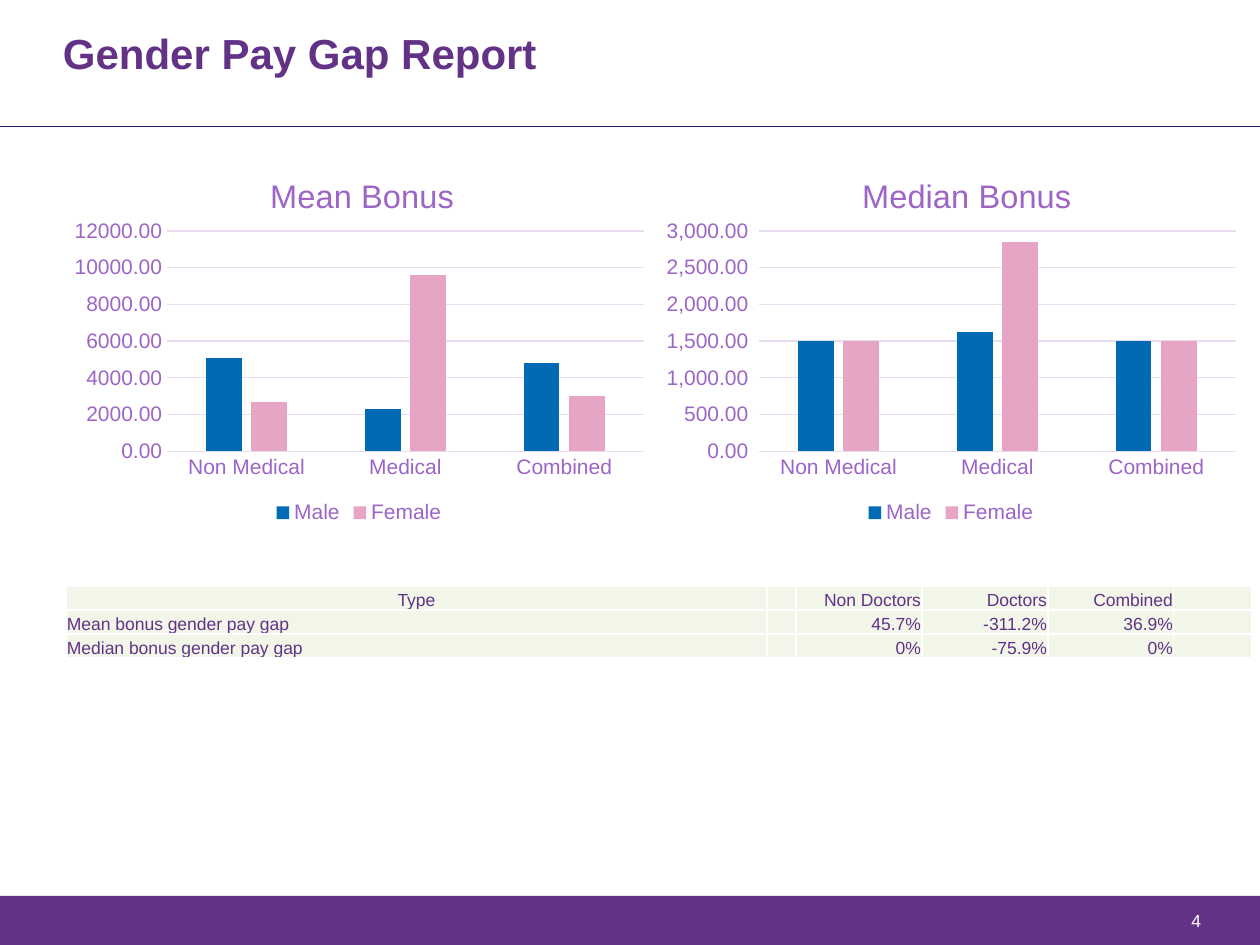
from lxml import etree
from pptx import Presentation
from pptx.chart.data import CategoryChartData
from pptx.dml.color import RGBColor
from pptx.enum.chart import XL_CHART_TYPE, XL_LEGEND_POSITION, XL_TICK_MARK
from pptx.enum.shapes import MSO_CONNECTOR, MSO_SHAPE
from pptx.enum.text import MSO_ANCHOR, PP_ALIGN
from pptx.oxml.ns import qn
from pptx.util import Pt

LEFT, CENTER, RIGHT = PP_ALIGN.LEFT, PP_ALIGN.CENTER, PP_ALIGN.RIGHT
NO_TICK = XL_TICK_MARK.NONE
SCALE = 914400 // 126  # EMU in one px
FONT = "Arial"
COLORS = {
    "purple": "623287", "navy": "1D155F", "white": "FFFFFF", "lilac": "9C65C6",
    "grid": "E8DBF2", "male": "006AB4", "female": "E6A5C4", "cell": "F1F6E9",
}

TITLE = "Gender Pay Gap Report"
PAGE_NUMBER = "4"
CATEGORIES = ["Non Medical", "Medical", "Combined"]
CHARTS = [
    {"title": "Mean Bonus", "format": "0.00", "maximum": 12000, "step": 2000,
     "Male": [5100, 2300, 4800], "Female": [2700, 9600, 3000]},
    {"title": "Median Bonus", "format": r"#,##0.00\ ;[Red]\(#,##0.00\)",
     "maximum": 3000, "step": 500,
     "Male": [1500, 1620, 1500], "Female": [1500, 2850, 1500]},
]
SERIES_COLORS = {"Male": "male", "Female": "female"}
TABLE_ROWS = [
    ["Type", "", "Non Doctors", "Doctors", "Combined", ""],
    ["Mean bonus gender pay gap", "", "45.7%", "-311.2%", "36.9%", ""],
    ["Median bonus gender pay gap", "", "0%", "-75.9%", "0%", ""],
]
COLUMN_WIDTHS = [701, 29, 126, 126, 126, 78]
ROW_HEIGHT = 24
CHART_LEFT, CHART_TOP, CHART_WIDTH, CHART_HEIGHT = 63, 149, 592, 380
PLOT_LAYOUT = {"layoutTarget": "inner", "xMode": "edge", "yMode": "edge",
               "x": 0.176, "y": 0.216, "w": 0.805, "h": 0.58}
TITLE_LAYOUT = {"xMode": "edge", "yMode": "edge", "x": 0.34, "y": 0.05}


def px(*lengths):
    return [length * SCALE for length in lengths]


def rgb(name):
    return RGBColor.from_string(COLORS[name])


def set_font(font, size, color, bold=False):
    font.name, font.size, font.bold = FONT, Pt(size), bold
    font.color.rgb = rgb(color)


def write_text(frame, text, size=10, color="purple", bold=False, align=LEFT, spacing=None):
    paragraph = frame.paragraphs[0]
    paragraph.alignment = align
    paragraph.line_spacing = spacing
    set_font(paragraph.font, size, color, bold)
    if text:
        run = paragraph.add_run()
        run.text = text
        set_font(run.font, size, color, bold)


def add_text(slide, box, text, **text_format):
    frame = slide.shapes.add_textbox(*px(*box)).text_frame
    frame.word_wrap = True
    frame.margin_left = frame.margin_right = frame.margin_top = frame.margin_bottom = 0
    write_text(frame, text, **text_format)


def set_layout(element, settings):
    """Place a chart part by hand, in fractions of the chart."""
    layout = element.find(qn("c:layout"))
    if layout is None:
        layout = etree.Element(qn("c:layout"))
        text = element.find(qn("c:tx"))
        element.insert(0 if text is None else 1, layout)
    for child in list(layout):
        layout.remove(child)
    manual = etree.SubElement(layout, qn("c:manualLayout"))
    for name, value in settings.items():
        etree.SubElement(manual, qn(f"c:{name}")).set("val", str(value))


def set_line(line, color, width):
    line.color.rgb = rgb(color)
    line.width = Pt(width)


def add_bonus_chart(slide, left, content):
    data = CategoryChartData()
    data.categories = CATEGORIES
    for name in SERIES_COLORS:
        data.add_series(name, content[name])
    box = px(left, CHART_TOP, CHART_WIDTH, CHART_HEIGHT)
    chart = slide.shapes.add_chart(XL_CHART_TYPE.COLUMN_CLUSTERED, *box, data).chart
    set_font(chart.font, 10, "purple")

    chart.has_title = True
    write_text(chart.chart_title.text_frame, content["title"], size=18.6,
               color="lilac", align=CENTER)
    chart.chart_title.include_in_layout = False
    set_layout(chart.chart_title._element, TITLE_LAYOUT)

    chart.has_legend = True
    chart.legend.position = XL_LEGEND_POSITION.BOTTOM
    chart.legend.include_in_layout = False
    set_font(chart.legend.font, 12, "lilac")

    plot = chart.plots[0]
    plot.gap_width, plot.overlap, plot.vary_by_categories = 219, -27, False
    for series in plot.series:
        series.format.fill.solid()
        series.format.fill.fore_color.rgb = rgb(SERIES_COLORS[series.name])
        series.invert_if_negative = False
    set_layout(chart._chartSpace.chart.plotArea, PLOT_LAYOUT)

    value_axis, category_axis = chart.value_axis, chart.category_axis
    for axis in (value_axis, category_axis):
        axis.major_tick_mark = axis.minor_tick_mark = NO_TICK
        set_font(axis.tick_labels.font, 12, "lilac")
    set_line(category_axis.format.line, "grid", 0.75)
    value_axis.format.line.fill.background()
    set_line(value_axis.major_gridlines.format.line, "grid", 0.75)
    value_axis.minimum_scale = 0
    value_axis.maximum_scale = content["maximum"]
    value_axis.major_unit = content["step"]
    value_axis.tick_labels.number_format = content["format"]
    value_axis.tick_labels.number_format_is_linked = False


def set_borders(cell, color, width):
    properties = cell._tc.get_or_add_tcPr()
    for side in ("lnL", "lnR", "lnT", "lnB"):
        line = etree.SubElement(properties, qn(f"a:{side}"), w=str(Pt(width)))
        fill = etree.SubElement(line, qn("a:solidFill"))
        etree.SubElement(fill, qn("a:srgbClr"), val=COLORS[color])


def add_gap_table(slide, left, top):
    box = px(left, top, sum(COLUMN_WIDTHS), ROW_HEIGHT * len(TABLE_ROWS))
    table = slide.shapes.add_table(len(TABLE_ROWS), len(COLUMN_WIDTHS), *box).table
    for column, width in zip(table.columns, COLUMN_WIDTHS):
        column.width = width * SCALE
    for i, texts in enumerate(TABLE_ROWS):
        table.rows[i].height = ROW_HEIGHT * SCALE
        for j, text in enumerate(texts):
            cell = table.cell(i, j)
            cell.margin_left = cell.margin_right = cell.margin_top = SCALE
            cell.margin_bottom = 0
            cell.vertical_anchor = MSO_ANCHOR.BOTTOM
            set_borders(cell, "white", 1)
            cell.fill.solid()
            cell.fill.fore_color.rgb = rgb("cell")
            first_column_align = CENTER if i == 0 else LEFT
            write_text(cell.text_frame, text, align=RIGHT if j else first_column_align)


def add_frame(slide):
    """Draw the footer band and the rule under the title."""
    footer = slide.shapes.add_shape(MSO_SHAPE.RECTANGLE, *px(0, 896, 1260, 49))
    footer.shadow.inherit = False
    footer.fill.solid()
    footer.fill.fore_color.rgb = rgb("purple")
    footer.line.fill.background()
    rule = slide.shapes.add_connector(MSO_CONNECTOR.STRAIGHT, *px(0, 126, 1260, 126))
    set_line(rule.line, "navy", 0.25)
    etree.SubElement(rule._element.spPr, qn("a:effectLst"))


def main():
    presentation = Presentation()
    presentation.slide_width, presentation.slide_height = px(1260, 945)
    slide = presentation.slides.add_slide(presentation.slide_layouts[6])
    add_frame(slide)
    add_text(slide, (1167, 910, 34, 29), PAGE_NUMBER, color="white", align=RIGHT)
    add_text(slide, (63, 33, 495, 43), TITLE, size=24, bold=True, spacing=0.9)
    for i, content in enumerate(CHARTS):
        add_bonus_chart(slide, CHART_LEFT + i * CHART_WIDTH, content)
    add_gap_table(slide, 66, 586)
    presentation.save("out.pptx")


if __name__ == "__main__":
    main()
